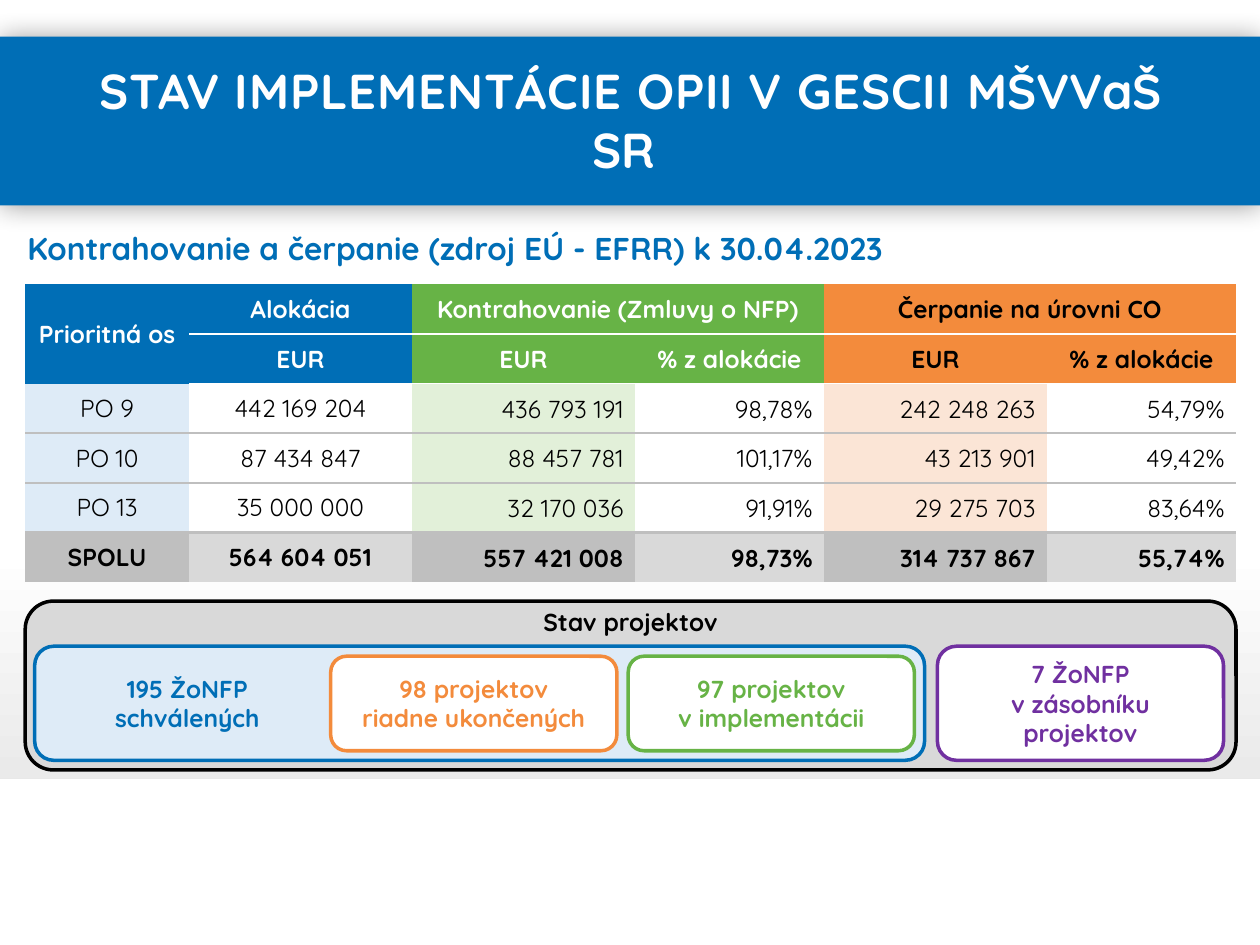
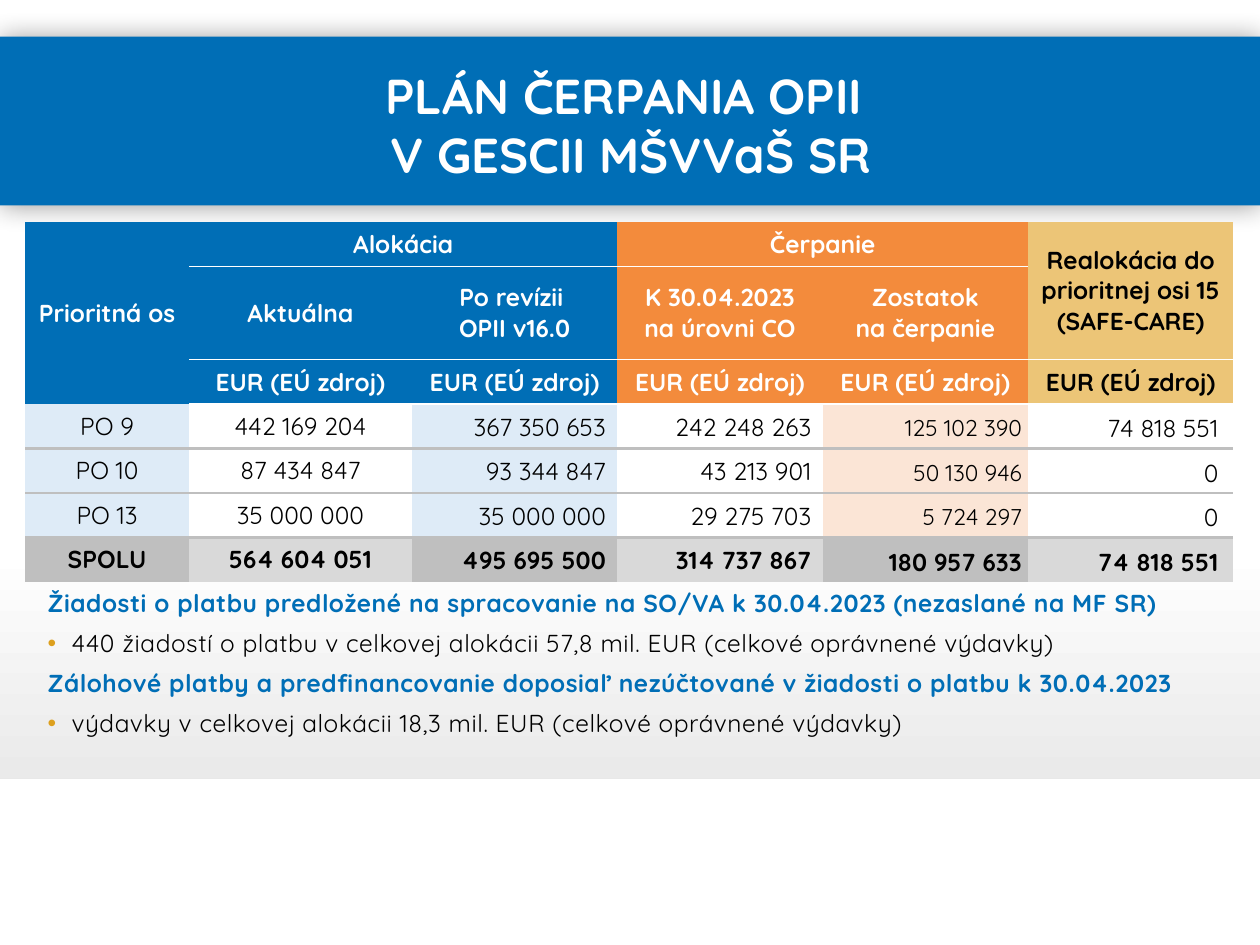
import dataclasses
import typing

import lxml.etree
import pptx
import pptx.dml.color
import pptx.enum.shapes
import pptx.enum.text
import pptx.oxml
import pptx.oxml.ns
import pptx.util

Pt = pptx.util.Pt
ALIGN = pptx.enum.text.PP_ALIGN
SHAPE = pptx.enum.shapes.MSO_SHAPE
MIDDLE = pptx.enum.text.MSO_ANCHOR.MIDDLE
qn = pptx.oxml.ns.qn

BLUE, GREEN, ORANGE, PURPLE, SAND = "006EB6", "67B346", "F38B3C", "7030A0", "ECC577"
PALE_BLUE, PALE_GREEN, PALE_ORANGE = "DEEBF7", "E2F0D9", "FBE5D6"
WHITE, BLACK, GRAY, LIGHT_GRAY = "FFFFFF", "000000", "BFBFBF", "D9D9D9"
BULLET_GOLD = "DDA01E"
NO_GRID_STYLE = "{2D5ABB26-0587-4C30-8999-92F81FD0307C}"
MARGIN = 14.4


def rgb(color):
    return pptx.dml.color.RGBColor.from_string(color)


def add_xml(parent, tag, **attributes):
    return lxml.etree.SubElement(parent, qn(tag), attributes)


def add_color(parent, color):
    return add_xml(parent, "a:srgbClr", val=color)


@dataclasses.dataclass
class Column:
    width: float
    fill: typing.Optional[str] = None
    align: typing.Any = ALIGN.RIGHT
    insets: tuple = (0.72, 0.72, 6.48, 0)
    size: float = 14
    line_spacing: typing.Optional[float] = None


@dataclasses.dataclass
class Header:
    row: int
    column: int
    text: str
    fill: str
    color: str = WHITE
    rows: int = 1
    columns: int = 1


class Deck:
    font = "Quicksand"
    size = 14

    def __init__(self):
        self.presentation = pptx.Presentation()
        self.presentation.slide_width = Pt(720)
        self.presentation.slide_height = Pt(540)
        self.slide = None

    def new_slide(self):
        self.slide = self.presentation.slides.add_slide(self.presentation.slide_layouts[6])
        fill = self.slide.background.fill
        fill.gradient()
        fill.gradient_angle = 270
        for stop, position, color in zip(fill.gradient_stops, (0.58, 1), (WHITE, LIGHT_GRAY)):
            stop.position = position
            stop.color.rgb = rgb(color)
        self.shape(SHAPE.RECTANGLE, (0, 445.68, 720, 94.32), WHITE, WHITE, 0.85)
        band = self.shape(SHAPE.RECTANGLE, (0, 20.88, 720, 96.48), BLUE)
        effects = band._element.spPr.find(qn("a:effectLst"))
        shadow = add_xml(effects, "a:outerShdw", blurRad=str(Pt(15)), dist="0", dir="0")
        add_xml(add_color(shadow, BLACK), "a:alpha", val="40000")

    def run(self, paragraph, text, color, bold=True, size=None, spacing=0):
        run = paragraph.add_run()
        run.text = text
        font = run.font
        font.name, font.size, font.bold = self.font, Pt(size or self.size), bold
        font.color.rgb = rgb(color)
        if spacing:
            run._r.get_or_add_rPr().set("spc", str(round(spacing * 100)))

    def paragraphs(self, frame, lines, color, bold=True, size=None, align=ALIGN.CENTER,
                   line_spacing=None):
        frame.word_wrap = True
        for index, line in enumerate(lines):
            paragraph = frame.add_paragraph() if index else frame.paragraphs[0]
            paragraph.alignment = align
            if line_spacing:
                paragraph.line_spacing = line_spacing
            self.run(paragraph, line, color, bold, size)

    def text_box(self, box):
        frame = self.slide.shapes.add_textbox(*map(Pt, box)).text_frame
        frame.word_wrap = True
        return frame

    def title_box(self, box):
        frame = self.text_box(box)
        frame.vertical_anchor = MIDDLE
        return frame

    def shape(self, kind, box, fill, line=None, line_width=2):
        shape = self.slide.shapes.add_shape(kind, *map(Pt, box))
        shape.shadow.inherit = False
        shape.fill.solid()
        shape.fill.fore_color.rgb = rgb(fill)
        if line:
            shape.line.color.rgb = rgb(line)
            shape.line.width = Pt(line_width)
        else:
            shape.line.fill.background()
        return shape

    def card(self, box, lines, color, fill=WHITE, center_tab=None):
        shape = self.shape(SHAPE.ROUNDED_RECTANGLE, box, fill, color)
        frame = shape.text_frame
        frame.vertical_anchor = MIDDLE
        if center_tab is None:
            self.paragraphs(frame, lines, color)
            return
        self.paragraphs(frame, ["\t" + line for line in lines], color, align=ALIGN.LEFT)
        for paragraph in frame.paragraphs:
            tabs = add_xml(paragraph._p.get_or_add_pPr(), "a:tabLst")
            add_xml(tabs, "a:tab", pos=str(Pt(center_tab)), algn="ctr")

    def bullet_list(self, box, items):
        frame = self.text_box(box)
        for index, (text, is_bullet) in enumerate(items):
            paragraph = frame.add_paragraph() if index else frame.paragraphs[0]
            paragraph.alignment = ALIGN.JUSTIFY
            paragraph.space_after = Pt(6)
            if is_bullet:
                properties = paragraph._p.get_or_add_pPr()
                properties.set("marL", str(Pt(13.68)))
                properties.set("indent", str(-Pt(13.68)))
                add_color(add_xml(properties, "a:buClr"), BULLET_GOLD)
                add_xml(properties, "a:buFont", typeface="Arial")
                add_xml(properties, "a:buChar", char="•")
            self.run(paragraph, text, BLACK if is_bullet else BLUE, not is_bullet, spacing=0.3)

    def cell(self, cell, text, fill, insets, color=BLACK, borders=(), **style):
        cell.vertical_anchor = MIDDLE
        cell.margin_left, cell.margin_top, cell.margin_right, cell.margin_bottom = map(Pt, insets)
        properties = cell._tc.get_or_add_tcPr()
        for tag, line_color, width in borders:
            line = add_xml(properties, tag, w=str(Pt(width)))
            add_color(add_xml(line, "a:solidFill"), line_color)
        if fill:
            cell.fill.solid()
            cell.fill.fore_color.rgb = rgb(fill)
        else:
            cell.fill.background()
        self.paragraphs(cell.text_frame, text.split("\n"), color, **style)

    def table(self, top, row_heights, columns, headers, body):
        width = sum(column.width for column in columns)
        frame = self.slide.shapes.add_table(
            len(row_heights), len(columns), Pt(MARGIN), Pt(top), Pt(width), Pt(sum(row_heights)))
        table = frame.table
        table.first_row = table.horz_banding = False
        table._tbl.tblPr.find(qn("a:tableStyleId")).text = NO_GRID_STYLE
        for row, height in zip(table.rows, row_heights):
            row.height = Pt(height)
        for table_column, column in zip(table.columns, columns):
            table_column.width = Pt(column.width)

        header_rows = len(row_heights) - len(body)
        for header in headers:
            cell = table.cell(header.row, header.column)
            last_row = header.row + header.rows
            if header.rows > 1 or header.columns > 1:
                cell.merge(table.cell(last_row - 1, header.column + header.columns - 1))
            borders = []
            if header.row > 0:
                borders.append(("a:lnT", WHITE, 1))
            if last_row < header_rows:
                borders.append(("a:lnB", WHITE, 1))
            self.cell(cell, header.text, header.fill, (7.2, 1.44, 7.2, 1.44),
                      header.color, borders)

        total_index = len(body) - 1
        for row_index, values in enumerate(body):
            is_total = row_index == total_index
            borders = []
            if 0 < row_index < total_index:
                borders.append(("a:lnT", GRAY, 1.5))
            if row_index < total_index - 1:
                borders.append(("a:lnB", GRAY, 1.5))
            for index, (column, value) in enumerate(zip(columns, values)):
                total_fill = LIGHT_GRAY if index % 2 else GRAY
                self.cell(table.cell(header_rows + row_index, index), value,
                          total_fill if is_total else column.fill, column.insets,
                          borders=borders, bold=is_total,
                          size=self.size if is_total else column.size,
                          align=column.align, line_spacing=column.line_spacing)


AXES = ("PO 9", "PO 10", "PO 13", "SPOLU")
ALLOCATION = ("442 169 204", "87 434 847", "35 000 000", "564 604 051")
DRAWN = ("242 248 263", "43 213 901", "29 275 703", "314 737 867")
CENTERED = {"align": ALIGN.CENTER, "insets": (3.6, 1.44, 3.6, 1.44)}
LEADING_COLUMNS = [Column(93.6, PALE_BLUE, **CENTERED), Column(127.44, **CENTERED)]


def build_status(deck):
    deck.new_slide()
    title = deck.title_box((48.24, 31.68, 624.24, 73.44)).paragraphs[0]
    title.alignment = ALIGN.CENTER
    deck.run(title, "STAV IMPLEMENTÁCIE OPII V GESCII ", WHITE, size=28, spacing=0.5)
    deck.run(title, "MŠVVaŠ SR ", WHITE, size=28)

    columns = LEADING_COLUMNS + [
        Column(127.44, PALE_GREEN), Column(108), Column(127.44, PALE_ORANGE), Column(108, WHITE)]
    headers = [
        Header(0, 0, "Prioritná os", BLUE, rows=2),
        Header(0, 1, "Alokácia", BLUE),
        Header(0, 2, "Kontrahovanie (Zmluvy o NFP)", GREEN, columns=2),
        Header(0, 4, "Čerpanie na úrovni CO", ORANGE, BLACK, columns=2),
        Header(1, 1, "EUR", BLUE),
    ]
    for start, fill, color in ((2, GREEN, WHITE), (4, ORANGE, BLACK)):
        headers.append(Header(1, start, "EUR", fill, color))
        headers.append(Header(1, start + 1, "% z alokácie", fill, color))
    contracted = ("436 793 191", "88 457 781", "32 170 036", "557 421 008")
    contracted_share = ("98,78%", "101,17%", "91,91%", "98,73%")
    drawn_share = ("54,79%", "49,42%", "83,64%", "55,74%")
    body = list(zip(AXES, ALLOCATION, contracted, contracted_share, DRAWN, drawn_share))
    deck.table(162.5, [28.35] * 6, columns, headers, body)

    deck.paragraphs(deck.text_box((8.64, 129.6, 702.72, 32.4)),
                    ["Kontrahovanie a čerpanie (zdroj EÚ - EFRR) k 30.04.2023"],
                    BLUE, size=18, align=ALIGN.LEFT, line_spacing=0.9)

    deck.shape(SHAPE.ROUNDED_RECTANGLE, (MARGIN, 343.5, 691.92, 96.5), LIGHT_GRAY, BLACK)
    deck.paragraphs(deck.text_box((MARGIN, 343.5, 691.92, 24.5)), ["Stav projektov"], BLACK)
    deck.card((19.8, 369.3, 508.5, 65.2), ["195 ŽoNFP", "schválených"], BLUE, PALE_BLUE, 77)
    deck.card((535.7, 369.3, 163.5, 65.2), ["7 ŽoNFP", "v zásobníku projektov"], PURPLE)
    deck.card((359, 375, 163.5, 54), ["97 projektov", "v implementácii"], GREEN)
    deck.card((189, 375, 163.5, 54), ["98 projektov", "riadne ukončených"], ORANGE)


def build_plan(deck):
    deck.new_slide()
    deck.paragraphs(deck.text_box((48.24, 33.84, 624.24, 74.88)),
                    ["PLÁN ČERPANIA OPII ", "V GESCII MŠVVaŠ SR"], WHITE, size=28)

    columns = LEADING_COLUMNS + [
        Column(117.36, PALE_BLUE),
        Column(117.36),
        Column(117.36, PALE_ORANGE, insets=(3.6, 0, 3.6, 0), size=13, line_spacing=1.15),
        Column(117.36, WHITE, insets=(3.6, 1.44, 8.64, 1.44), line_spacing=1.15),
    ]
    headers = [
        Header(0, 0, "Prioritná os", BLUE, rows=3),
        Header(0, 1, "Alokácia", BLUE, columns=2),
        Header(0, 3, "Čerpanie", ORANGE, columns=2),
        Header(0, 5, "Realokácia do prioritnej osi 15 (SAFE-CARE)", SAND, BLACK, rows=2),
        Header(1, 1, "Aktuálna", BLUE),
        Header(1, 2, "Po revízii \nOPII v16.0", BLUE),
        Header(1, 3, "K 30.04.2023 na úrovni CO", ORANGE),
        Header(1, 4, "Zostatok\nna čerpanie", ORANGE),
    ]
    for index, fill in enumerate((BLUE, BLUE, ORANGE, ORANGE, SAND), 1):
        color = BLACK if fill == SAND else WHITE
        headers.append(Header(2, index, "EUR (EÚ zdroj)", fill, color))
    revised = ("367 350 653", "93 344 847", "35 000 000", "495 695 500")
    remaining = ("125 102 390", "50 130 946", "5 724 297", "180 957 633")
    reallocated = ("74 818 551", "0", "0", "74 818 551")
    body = list(zip(AXES, ALLOCATION, revised, DRAWN, remaining, reallocated))
    deck.table(126.8, [25.4, 39.6] + [25.4] * 5, columns, headers, body)

    deck.bullet_list((20.16, 332.64, 680.4, 113.04), [
        ("Žiadosti o platbu predložené na spracovanie na SO/VA k 30.04.2023 "
         "(nezaslané na MF SR)", False),
        ("440 žiadostí o platbu v celkovej alokácii 57,8 mil. EUR "
         "(celkové oprávnené výdavky)", True),
        ("Zálohové platby a predfinancovanie doposiaľ nezúčtované v žiadosti o platbu "
         "k 30.04.2023", False),
        ("výdavky v celkovej alokácii 18,3 mil. EUR (celkové oprávnené výdavky)", True),
    ])


def main():
    deck = Deck()
    build_status(deck)
    build_plan(deck)
    deck.presentation.save("out.pptx")


if __name__ == "__main__":
    main()
